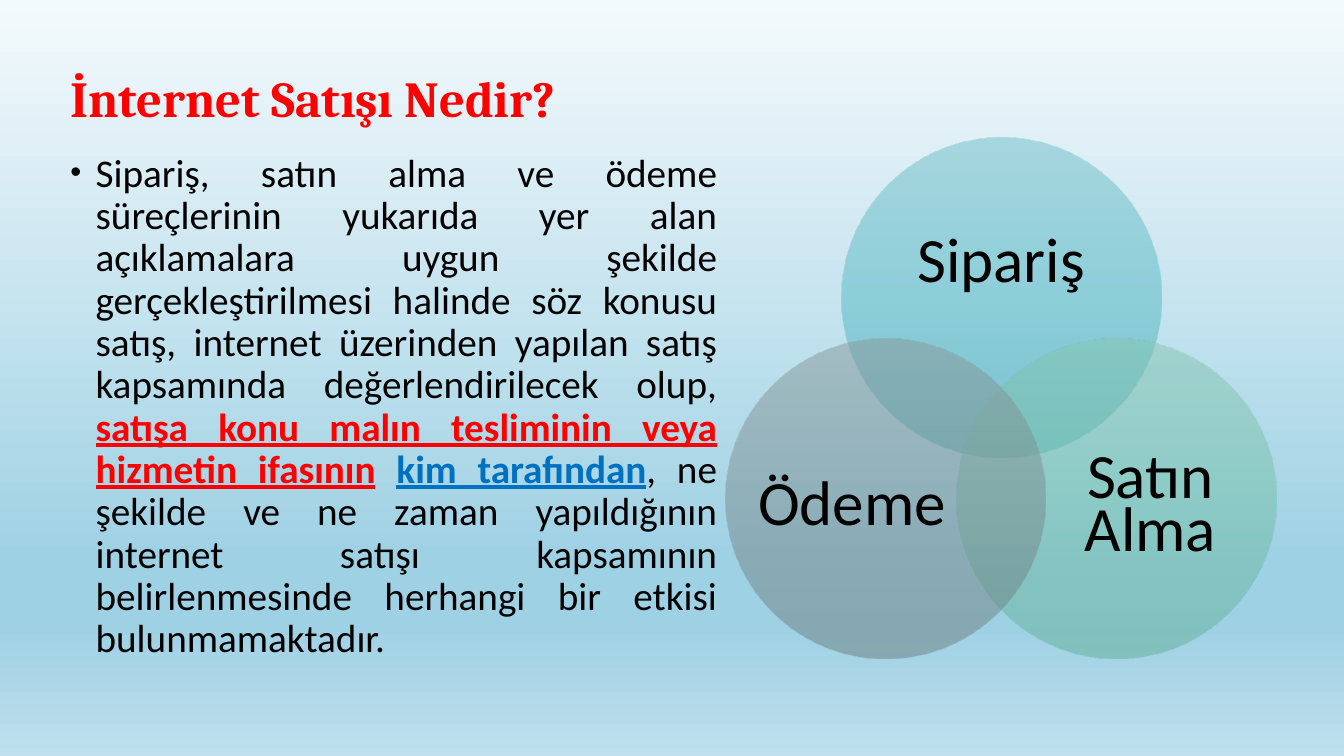
from pptx import Presentation
from pptx import util as u
from pptx.dml.color import RGBColor
from pptx.enum import shapes, text
from pptx.oxml import parse_xml
from pptx.oxml.ns import nsdecls, qn

BLACK = RGBColor(0x00, 0x00, 0x00)
RED = RGBColor(0xFF, 0x00, 0x00)
BLUE = RGBColor(0x00, 0x70, 0xC0)
SKY_TOP = RGBColor(0xF4, 0xFA, 0xFC)
SKY_MID = RGBColor(0x9F, 0xD1, 0xE4)
SKY_END = RGBColor(0xBF, 0xE0, 0xED)
TEAL = [RGBColor(0x6F, 0xBE, 0xC7), RGBColor(0x53, 0xBA, 0xC5), RGBColor(0x44, 0xAA, 0xB5)]
GREEN = [RGBColor(0x86, 0xC5, 0xB1), RGBColor(0x71, 0xC1, 0xA8), RGBColor(0x61, 0xAF, 0x97)]
GREY = [RGBColor(0x89, 0x99, 0x9A), RGBColor(0x79, 0x8D, 0x8F), RGBColor(0x6A, 0x7E, 0x80)]

BODY = [
    ("Sipariş, satın alma ve ödeme süreçlerinin yukarıda yer alan açıklamalara uygun "
     "şekilde gerçekleştirilmesi halinde söz konusu satış, internet üzerinden yapılan "
     "satış kapsamında değerlendirilecek olup, ", {}),
    ("satışa konu malın tesliminin veya hizmetin ifasının",
     dict(color=RED, bold=True, underline=True)),
    (" ", {}),
    ("kim tarafından", dict(color=BLUE, bold=True, underline=True)),
    (", ne şekilde ve ne zaman yapıldığının internet satışı kapsamının "
     "belirlenmesinde herhangi bir etkisi bulunmamaktadır.", {}),
]

DIAMETER = 3.17
CIRCLES = [
    ("Sipariş", TEAL, (8.35, 1.37), (8.77, 1.93, 2.32, 1.43)),
    ("Satın Alma", GREEN, (9.49, 3.36), (10.46, 4.18, 1.9, 1.74)),
    ("Ödeme", GREY, (7.2, 3.36), (7.5, 4.18, 1.9, 1.74)),
]


def add_run(p, content, size=28, font="Calibri", color=BLACK, bold=False, underline=False):
    r = p.add_run()
    r.text = content
    r.font.size = u.Pt(size)
    r.font.name = font
    r.font.color.rgb = color
    r.font.bold = bold
    r.font.underline = underline
    return r


class Deck:
    """Draws styled elements on the current slide."""

    def __init__(self, prs):
        self.s = prs.slides.add_slide(prs.slide_layouts[6])

    def gradient_shape(self, kind, box, stops, alpha=100):
        sp = self.s.shapes.add_shape(kind, *map(u.Inches, box))
        sp.shadow.inherit = False
        sp.line.fill.background()
        sp.fill.gradient()
        old = sp._element.spPr.find(qn("a:gradFill"))
        marks = "".join(
            f'<a:gs pos="{pos * 1000}"><a:srgbClr val="{color}">'
            f'<a:alpha val="{alpha * 1000}"/></a:srgbClr></a:gs>'
            for pos, color in stops)
        new = parse_xml(
            f'<a:gradFill {nsdecls("a")} rotWithShape="1"><a:gsLst>{marks}</a:gsLst>'
            '<a:lin ang="5400000" scaled="0"/></a:gradFill>')
        old.getparent().replace(old, new)
        return sp

    def text_box(self, box, runs, align=text.PP_ALIGN.LEFT, anchor=text.MSO_ANCHOR.TOP,
                 spacing=0.9, inset=True):
        tf = self.s.shapes.add_textbox(*map(u.Inches, box)).text_frame
        tf.word_wrap = True
        tf.vertical_anchor = anchor
        if not inset:
            tf.margin_left = tf.margin_right = tf.margin_top = tf.margin_bottom = 0
        p = tf.paragraphs[0]
        p.alignment = align
        p.line_spacing = spacing
        for content, style in runs:
            add_run(p, content, **style)
        return p

    def bullet_box(self, box, runs):
        p = self.text_box(box, runs, align=text.PP_ALIGN.JUSTIFY)
        p.space_before = u.Pt(18)
        pPr = p._p.get_or_add_pPr()
        pPr.set("marL", str(u.Inches(0.25)))
        pPr.set("indent", str(-u.Inches(0.25)))
        for xml in (f'<a:buClr {nsdecls("a")}><a:srgbClr val="{BLACK}"/></a:buClr>',
                    f'<a:buSzPct {nsdecls("a")} val="80000"/>',
                    f'<a:buFont {nsdecls("a")} typeface="Arial"/>',
                    f'<a:buChar {nsdecls("a")} char="•"/>'):
            pPr.append(parse_xml(xml))

    def venn_circle(self, label, colors, corner, label_box):
        self.gradient_shape(shapes.MSO_SHAPE.OVAL, (*corner, DIAMETER, DIAMETER),
                            zip((0, 50, 100), colors), alpha=50)
        self.text_box(label_box, [(label, dict(size=45))], align=text.PP_ALIGN.CENTER,
                      anchor=text.MSO_ANCHOR.MIDDLE, spacing=0.71, inset=False)


def main():
    prs = Presentation()
    prs.slide_width, prs.slide_height = u.Inches(13.33), u.Inches(7.5)
    deck = Deck(prs)
    deck.gradient_shape(shapes.MSO_SHAPE.RECTANGLE, (0, 0, 13.33, 7.5),
                        [(0, SKY_TOP), (74, SKY_MID), (83, SKY_MID), (100, SKY_END)])
    deck.text_box((0.6, 0.44, 12, 0.87),
                  [("İnternet Satışı Nedir?",
                    dict(size=36, font="Cambria", color=RED, bold=True))],
                  anchor=text.MSO_ANCHOR.BOTTOM, spacing=0.8)
    deck.bullet_box((0.6, 1.47, 6.61, 5.59), BODY)
    for circle in CIRCLES:
        deck.venn_circle(*circle)
    prs.save("out.pptx")


if __name__ == "__main__":
    main()
